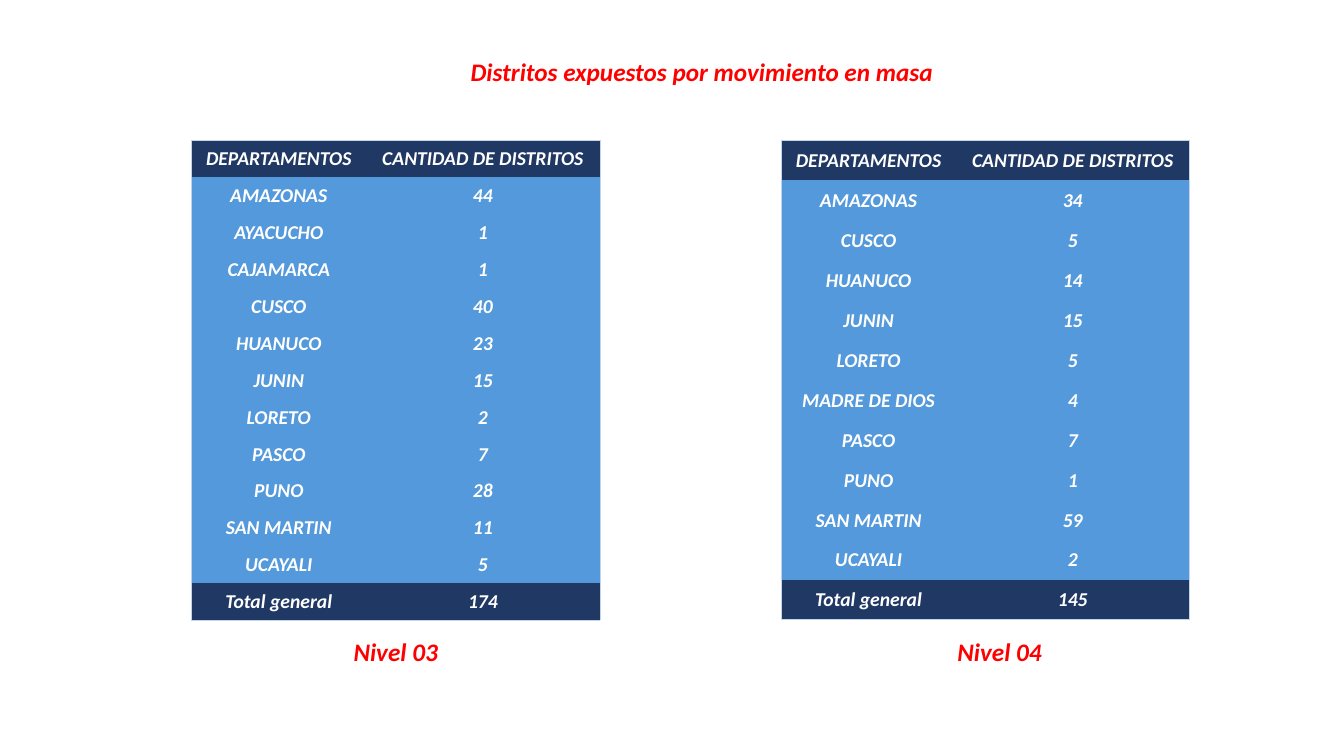
from lxml import etree
from pptx import Presentation
from pptx.dml.color import RGBColor
from pptx.enum.text import MSO_ANCHOR, PP_ALIGN
from pptx.oxml.ns import qn
from pptx.util import Inches, Pt

MIDDLE = MSO_ANCHOR.MIDDLE
CENTER = PP_ALIGN.CENTER

RED, WHITE = "FF0000", "FFFFFF"
NAVY, BLUE, EDGE = "203864", "5399DB", "C4D5EB"
TOP, HEIGHT = 1.39, 4.76
WIDTHS = (1.73, 2.32)
HEAD = ("DEPARTAMENTOS", "CANTIDAD DE DISTRITOS")

LEVELS = [
    ("Nivel 03", 1.9, 3.39, [
        ("AMAZONAS", 44), ("AYACUCHO", 1), ("CAJAMARCA", 1), ("CUSCO", 40),
        ("HUANUCO", 23), ("JUNIN", 15), ("LORETO", 2), ("PASCO", 7),
        ("PUNO", 28), ("SAN MARTIN", 11), ("UCAYALI", 5),
        ("Total general", 174),
    ]),
    ("Nivel 04", 7.75, 9.38, [
        ("AMAZONAS", 34), ("CUSCO", 5), ("HUANUCO", 14), ("JUNIN", 15),
        ("LORETO", 5), ("MADRE DE DIOS", 4), ("PASCO", 7), ("PUNO", 1),
        ("SAN MARTIN", 59), ("UCAYALI", 2),
        ("Total general", 145),
    ]),
]


def color(code):
    return RGBColor.from_string(code)


def write(frame, text, size, code):
    frame.text = text
    para = frame.paragraphs[0]
    para.alignment = CENTER
    font = para.runs[0].font
    font.name = "Calibri"
    font.size = Pt(size)
    font.bold = font.italic = True
    font.color.rgb = color(code)


def set_title(slide, text):
    title = slide.shapes.title
    title.left, title.top = Inches(4.54), Inches(0.51)
    title.width, title.height = Inches(4.84), Inches(0.4)
    frame = title.text_frame
    write(frame, text, 18, RED)
    frame.word_wrap = False
    frame.vertical_anchor = MIDDLE


def add_label(slide, text, left):
    box = slide.shapes.add_textbox(
        Inches(left), Inches(6.26), Inches(1.07), Inches(0.4))
    box.text_frame.word_wrap = True
    write(box.text_frame, text, 18, RED)


def set_edges(cell, edges):
    props = cell._tc.get_or_add_tcPr()
    for index, (side, shown) in enumerate(edges.items()):
        line = etree.Element(qn(f"a:ln{side}"), w=str(Pt(0.5)))
        if shown:
            fill = etree.SubElement(line, qn("a:solidFill"))
            etree.SubElement(fill, qn("a:srgbClr"), val=EDGE)
        else:
            etree.SubElement(line, qn("a:noFill"))
        props.insert(index, line)


def style_cell(cell, text, back):
    write(cell.text_frame, text, 14, WHITE)
    cell.vertical_anchor = MIDDLE
    cell.margin_left = cell.margin_right = cell.margin_top = Inches(0.01)
    cell.margin_bottom = 0
    cell.fill.solid()
    cell.fill.fore_color.rgb = color(back)


def add_grid(slide, left, data):
    rows = [HEAD, *data]
    last = len(rows) - 1
    table = slide.shapes.add_table(
        len(rows), len(HEAD), Inches(left), Inches(TOP),
        Inches(sum(WIDTHS)), Inches(HEIGHT)).table
    for col, width in zip(table.columns, WIDTHS):
        col.width = Inches(width)
    for r, row in enumerate(rows):
        table.rows[r].height = Inches(HEIGHT / len(rows))
        for c, value in enumerate(row):
            cell = table.cell(r, c)
            style_cell(cell, str(value), NAVY if r in (0, last) else BLUE)
            set_edges(cell, {"L": c == 0, "R": c == 1,
                             "T": r == 0, "B": r == last})


def main():
    deck = Presentation()
    deck.slide_width, deck.slide_height = Inches(13.33), Inches(7.5)
    slide = deck.slides.add_slide(deck.slide_layouts[5])
    set_title(slide, "Distritos expuestos por movimiento en masa")
    for name, left, label, data in LEVELS:
        add_grid(slide, left, data)
        add_label(slide, name, label)
    deck.save("out.pptx")


if __name__ == "__main__":
    main()
